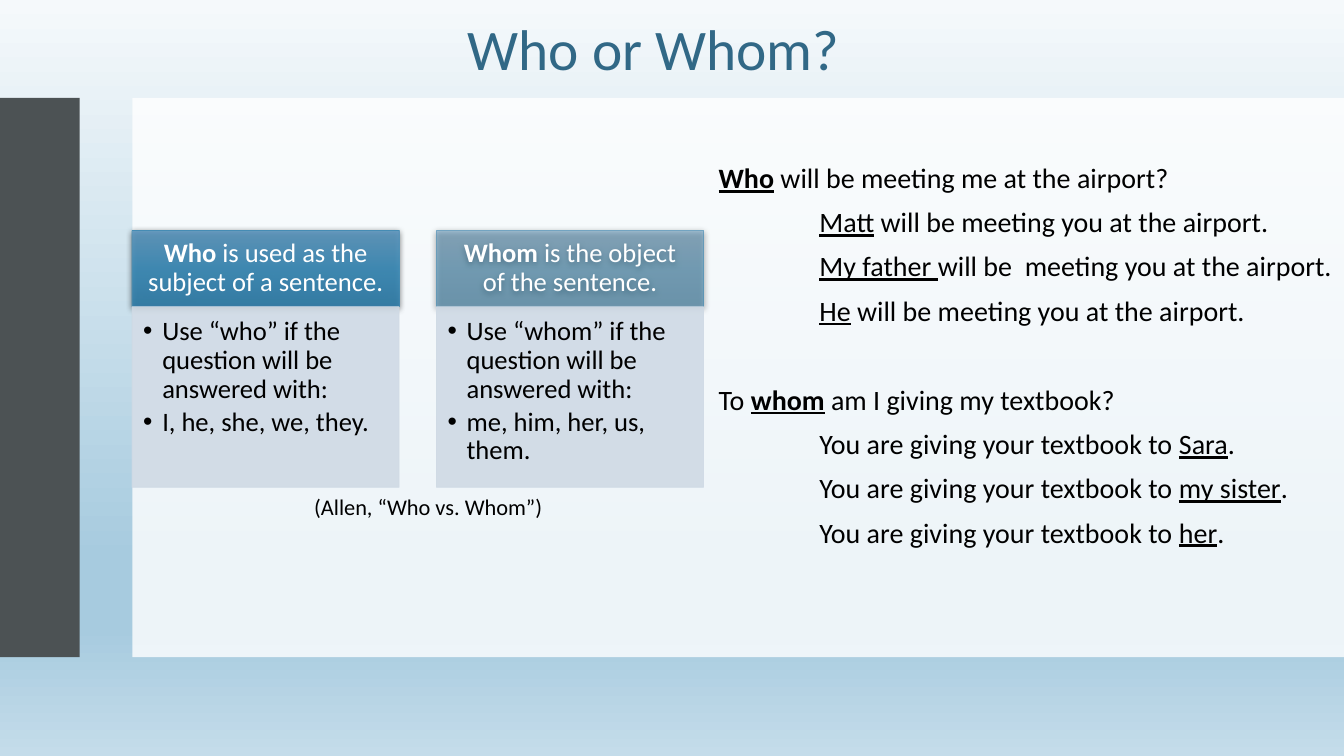
from dataclasses import dataclass

from lxml import etree
from pptx import Presentation
from pptx.dml.color import RGBColor
from pptx.enum.shapes import MSO_SHAPE
from pptx.enum.text import MSO_ANCHOR, MSO_AUTO_SIZE, PP_ALIGN
from pptx.oxml.ns import qn
from pptx.util import Cm, Pt

RECTANGLE = MSO_SHAPE.RECTANGLE
TOP, MIDDLE = MSO_ANCHOR.TOP, MSO_ANCHOR.MIDDLE
LEFT, CENTER = PP_ALIGN.LEFT, PP_ALIGN.CENTER
NO_FIT, GROW = MSO_AUTO_SIZE.NONE, MSO_AUTO_SIZE.SHAPE_TO_FIT_TEXT
TITLE_ONLY = 5


@dataclass(frozen=True)
class Theme:
    font: str = "Calibri"
    title_size: int = 41
    card_size: int = 19
    example_size: int = 20
    citation_size: int = 16
    title: str = "316886"
    text: str = "000000"
    light: str = "FFFFFF"
    bar: str = "4C5254"
    card_line: str = "418AB3"
    card_body: str = "CFDAE5"
    sky: tuple = ((0, "F5F9FB"), (74, "A7CBDF"), (83, "A7CBDF"), (100, "C4DCEA"))
    header: tuple = ((0, "5E97BE"), (50, "3B8CB9"), (100, "307DA9"))


THEME = Theme()

# Spans are (text, style), where the style holds b for bold and u for underline
CARDS = [
    (90, [("Who", "b"), (" is used as the subject of a sentence.", "")],
     ["Use “who” if the question will be answered with:",
      "I, he, she, we, they."]),
    (50, [("Whom", "b"), (" is the object of the sentence.", "")],
     ["Use “whom” if the question will be answered with:",
      "me, him, her, us, them."]),
]
WHO_QUESTION = [("Who", "bu"), (" will be meeting me at the airport?", "")]
WHO_ANSWERS = [("Matt", " will be meeting you at the airport."),
               ("My father ", "will be  meeting you at the airport."),
               ("He", " will be meeting you at the airport.")]
WHOM_QUESTION = [("To ", ""), ("whom", "bu"), (" am I giving my textbook?", "")]
WHOM_ANSWERS = ["Sara", "my sister", "her"]


def apply(target, **values):
    for name, value in values.items():
        setattr(target, name, value)


def element(parent, tag, **attributes):
    values = {name: str(value) for name, value in attributes.items()}
    return etree.SubElement(parent, qn(tag), values)


def set_gradient(shape, stops):
    """Fill from top to bottom with any number of stops."""
    shape.fill.gradient()
    shape.fill.gradient_angle = 270
    stop_list = shape._element.spPr.find(".//" + qn("a:gsLst"))
    for stop in list(stop_list):
        stop_list.remove(stop)
    for percent, color in stops:
        stop = element(stop_list, "a:gs", pos=percent * 1000)
        element(stop, "a:srgbClr", val=color)


def set_opacity(shape, percent):
    for color in list(shape._element.spPr.iter(qn("a:srgbClr"))):
        element(color, "a:alpha", val=percent * 1000)


def add_shadow(shape):
    effects = shape._element.spPr.find(qn("a:effectLst"))
    shadow = element(effects, "a:outerShdw", blurRad=Pt(4.5), dist=Pt(1.5),
                     dir=5400000, algn="ctr", rotWithShape=0)
    color = element(shadow, "a:srgbClr", val="000000")
    element(color, "a:alpha", val=63000)


def add_panel(page, bounds, fill, line=None, opacity=100):
    """Rectangle with a plain colour or a tuple of gradient stops."""
    panel = page.shapes.add_shape(RECTANGLE, *map(Cm, bounds))
    panel.shadow.inherit = False
    if isinstance(fill, str):
        panel.fill.solid()
        panel.fill.fore_color.rgb = RGBColor.from_string(fill)
    else:
        set_gradient(panel, fill)
    if line:
        panel.line.color.rgb = RGBColor.from_string(line)
        panel.line.width = Pt(0.5)
    else:
        panel.line.fill.background()
    if opacity < 100:
        set_opacity(panel, opacity)
    return panel


def set_frame(box, insets=(0.25, 0.13, 0.25, 0.13), **values):
    sides = ("margin_left", "margin_top", "margin_right", "margin_bottom")
    apply(box.text_frame, word_wrap=True, **dict(zip(sides, map(Cm, insets))))
    apply(box.text_frame, **values)


def write(box, paragraphs, size, color, **values):
    """Write lists of spans, one list for each paragraph."""
    frame = box.text_frame
    for index, spans in enumerate(paragraphs):
        para = frame.add_paragraph() if index else frame.paragraphs[0]
        apply(para, **values)
        for text, style in spans:
            span = para.add_run()
            span.text = text
            apply(span.font, name=THEME.font, size=Pt(size),
                  bold="b" in style, underline="u" in style)
            span.font.color.rgb = RGBColor.from_string(color)
    return frame.paragraphs


def indent(para, left, first=0, bullet=None):
    properties = para._p.get_or_add_pPr()
    properties.set("marL", str(Cm(left)))
    properties.set("indent", str(Cm(first)))
    if bullet:
        element(properties, "a:buFont", typeface="Arial")
        element(properties, "a:buChar", char=bullet)


def add_background(page):
    add_panel(page, (0, 0, 33.87, 19.05), THEME.sky)
    add_panel(page, (0, 2.47, 2.01, 14.09), THEME.bar)
    add_panel(page, (3.34, 2.47, 30.53, 14.09), THEME.light, opacity=80)


def add_title(page, text):
    title = page.shapes.title
    apply(title, left=Cm(9.17), top=Cm(0.41), width=Cm(14.61), height=Cm(1.83))
    set_frame(title, vertical_anchor=TOP, auto_size=NO_FIT)
    write(title, [[(text, "")]], THEME.title_size, THEME.title,
          alignment=CENTER, line_spacing=0.9)
    # Bring the title in front of the background
    page.shapes._spTree.append(title._element)


def add_card(page, left, opacity, heading, rules):
    header = add_panel(page, (left, 5.81, 6.73, 1.92), THEME.header,
                       THEME.card_line, opacity)
    add_shadow(header)
    set_frame(header, (0.38, 0.2, 0.38, 0.2), vertical_anchor=MIDDLE)
    write(header, [heading], THEME.card_size, THEME.light,
          alignment=CENTER, line_spacing=0.9)

    body = add_panel(page, (left, 7.73, 6.73, 4.55), THEME.card_body,
                     THEME.card_body, 90)
    set_frame(body, (0.28, 0.28, 0.38, 0.43), vertical_anchor=TOP)
    for para in write(body, [[(rule, "")] for rule in rules],
                      THEME.card_size, THEME.text, alignment=LEFT,
                      line_spacing=0.9, space_after=Pt(3)):
        indent(para, 0.48, -0.48, "•")


def add_examples(page):
    who = [[(name, "u"), (rest, "")] for name, rest in WHO_ANSWERS]
    whom = [[("You are giving your textbook to ", ""), (name, "u"), (".", "")]
            for name in WHOM_ANSWERS]
    questions = (WHO_QUESTION, WHOM_QUESTION)
    lines = [WHO_QUESTION, *who, WHOM_QUESTION, *whom]
    box = page.shapes.add_textbox(Cm(17.86), Cm(4.01), Cm(16.05), Cm(10.03))
    set_frame(box, auto_size=NO_FIT)
    paras = write(box, lines, THEME.example_size, THEME.text,
                  line_spacing=0.9, space_before=Pt(10))
    for para, spans in zip(paras, lines):
        if spans not in questions:
            indent(para, 2.54)
    # Set the second question apart from the first group
    paras[lines.index(WHOM_QUESTION)].space_before = Pt(42)


def add_citation(page, text):
    box = page.shapes.add_textbox(Cm(7.67), Cm(12.29), Cm(6.35), Cm(0.94))
    set_frame(box, word_wrap=False, auto_size=GROW)
    write(box, [[(text, "")]], THEME.citation_size, THEME.text)


def main():
    deck = Presentation()
    apply(deck, slide_width=Cm(33.87), slide_height=Cm(19.05))
    page = deck.slides.add_slide(deck.slide_layouts[TITLE_ONLY])
    add_background(page)
    add_title(page, "Who or Whom?")
    for index, card in enumerate(CARDS):
        add_card(page, 3.33 + index * 7.67, *card)
    add_examples(page)
    add_citation(page, "(Allen, “Who vs. Whom”)")
    deck.save("out.pptx")


if __name__ == "__main__":
    main()
